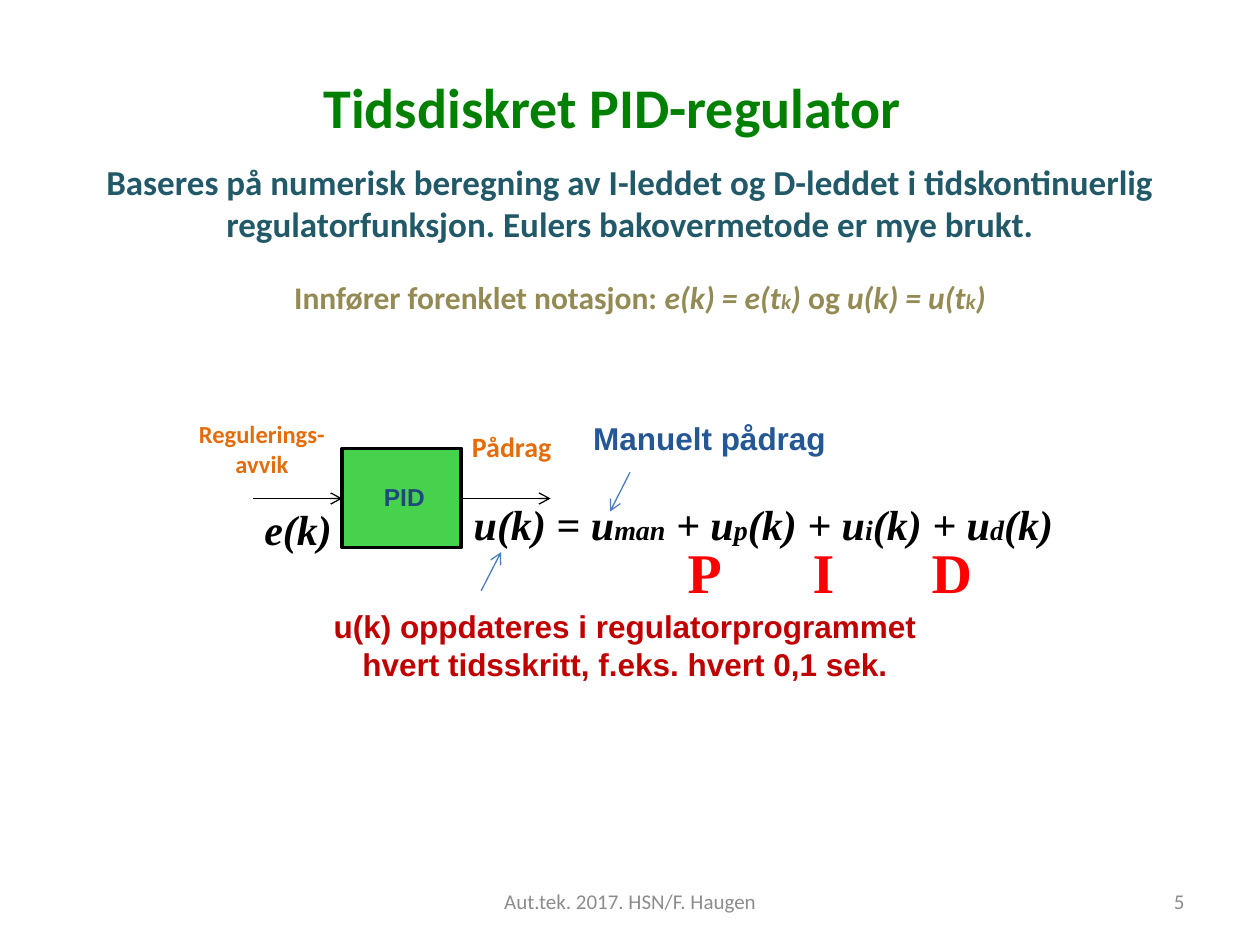
from lxml import etree
from pptx import Presentation
from pptx.dml.color import RGBColor
from pptx.enum import shapes, text
from pptx.oxml import ns
from pptx.util import Cm, Pt

GREEN = RGBColor(0x00, 0x80, 0x00)
TEAL = RGBColor(0x21, 0x59, 0x68)
OLIVE = RGBColor(0x94, 0x8A, 0x54)
ORANGE = RGBColor(0xE4, 0x6C, 0x0A)
NAVY = RGBColor(0x1F, 0x49, 0x7D)
BLUE = RGBColor(0x24, 0x57, 0x94)
ARROW_BLUE = RGBColor(0x4B, 0x7E, 0xBC)
RED = RGBColor(0xFF, 0x00, 0x00)
DARK_RED = RGBColor(0xC0, 0x00, 0x00)
BLOCK_GREEN = RGBColor(0x46, 0xD2, 0x4D)
BLACK = RGBColor(0x00, 0x00, 0x00)
GREY = RGBColor(0x8C, 0x8C, 0x8C)

LEFT, CENTER, RIGHT = text.PP_ALIGN.LEFT, text.PP_ALIGN.CENTER, text.PP_ALIGN.RIGHT
SANS, ARIAL, SERIF = "Calibri", "Arial", "Times New Roman"

# Content: a paragraph is a string or a list of (text, run font settings)
ITALIC, INDEX = {"italic": True}, {"italic": True, "size": Pt(12)}
SUB = {"size": Pt(16)}

TITLE = "Tidsdiskret PID-regulator"
NOTATION = [
    ("Innfører forenklet notasjon: ", {}),
    ("e(k) = e(t", ITALIC), ("k", INDEX), (") ", ITALIC), ("og", {}),
    (" u(k) = u(t", ITALIC), ("k", INDEX), (")", ITALIC),
]
CONTROL_LAW = [
    ("u(k) = u", {}), ("man", SUB), (" + u", {}), ("p", SUB), ("(k) + u", {}),
    ("i", SUB), ("(k) + u", {}), ("d", SUB), ("(k)", {}),
]
INTRO = ("Baseres på numerisk beregning av I-leddet og D-leddet i tidskontinuerlig "
         "regulatorfunksjon. Eulers bakovermetode er mye brukt.")
UPDATE = ["u(k) oppdateres i regulatorprogrammet",
          "hvert tidsskritt, f.eks. hvert 0,1 sek."]

# Paragraphs, box in cm, typeface, size, colour, alignment, wrap
LABELS = [
    ([INTRO], (0.9, 3.12, 23.6, 1.96), SANS, 20, TEAL, CENTER, True),
    ([NOTATION], (3.5, 5.49, 18.8, 1.02), SANS, 18, OLIVE, CENTER, True),
    (["Regulerings-", "avvik"], (3.5, 8.33, 3.56, 1.45), SANS, 14, ORANGE, CENTER, False),
    (["Pådrag"], (9.25, 8.53, 2.13, 0.94), SANS, 16, ORANGE, CENTER, False),
    (["PID"], (7.49, 9.6, 1.35, 0.86), ARIAL, 14, NAVY, LEFT, False),
    (["Manuelt pådrag"], (11.71, 8.33, 5.21, 1.12), ARIAL, 18, BLUE, LEFT, True),
    (UPDATE, (0.5, 12.12, 24.2, 1.88), ARIAL, 18, DARK_RED, CENTER, True),
]
FORMULAS = [
    (["e(k)"], (5.08, 10.03, 1.88, 1.27), False),
    ([CONTROL_LAW], (9.3, 9.93, 13.2, 1.3), True),
]
TERMS = {"P": 13.31, "I": 15.7, "D": 18.29}
FOOTERS = [
    ("Aut.tek. 2017. HSN/F. Haugen", 8.68, 8.05, CENTER),
    ("5", 18.21, 5.92, RIGHT),
]

# Block diagram geometry in cm
BLOCK = (6.9, 9.04, 2.4, 2.0)
SIGNAL_LENGTH = 1.8
block_left, block_right = BLOCK[0], BLOCK[0] + BLOCK[2]
signal_y = BLOCK[1] + BLOCK[3] / 2 + 0.01
ARROWS = [
    ((block_left - SIGNAL_LENGTH, signal_y), (block_left, signal_y), BLACK),
    ((block_right, signal_y), (block_right + SIGNAL_LENGTH, signal_y), BLACK),
    ((9.7, 11.91), (10.1, 11.13), ARROW_BLUE),
    ((12.7, 9.52), (12.3, 10.31), ARROW_BLUE),
]


def place(shape, box):
    shape.left, shape.top, shape.width, shape.height = map(Cm, box)


def write(frame, paragraphs, face, size, color, align=CENTER, bold=True, italic=False):
    for number, content in enumerate(paragraphs):
        paragraph = frame.paragraphs[0] if number == 0 else frame.add_paragraph()
        paragraph.alignment = align
        font = paragraph.font
        font.name, font.size, font.bold, font.italic = face, Pt(size), bold, italic
        font.color.rgb = color
        for words, settings in [(content, {})] if isinstance(content, str) else content:
            run = paragraph.add_run()
            run.text = words
            for setting, value in settings.items():
                setattr(run.font, setting, value)


def add_label(slide, paragraphs, box, *style, wrap=True, middle=False, **emphasis):
    frame = slide.shapes.add_textbox(*map(Cm, box)).text_frame
    frame.word_wrap = wrap
    if middle:
        frame.vertical_anchor = text.MSO_ANCHOR.MIDDLE
    write(frame, paragraphs, *style, **emphasis)


def add_arrow(slide, start, end, color):
    arrow = slide.shapes.add_connector(
        shapes.MSO_CONNECTOR.STRAIGHT, *map(Cm, start + end))
    arrow.line.color.rgb = color
    arrow.line.width = Pt(0.75)
    etree.SubElement(arrow.line._get_or_add_ln(), ns.qn("a:tailEnd"), type="arrow")
    etree.SubElement(arrow._element.spPr, ns.qn("a:effectLst"))


def main():
    deck = Presentation()
    deck.slide_width, deck.slide_height = Cm(25.4), Cm(19.05)
    slide = deck.slides.add_slide(deck.slide_layouts[5])

    # Title
    title = slide.shapes.title
    place(title, (4.37, 1.32, 15.95, 1.63))
    write(title.text_frame, [TITLE], SANS, 32, GREEN)

    # Controller block and arrows
    block = slide.shapes.add_shape(shapes.MSO_SHAPE.RECTANGLE, *map(Cm, BLOCK))
    block.shadow.inherit = False
    block.fill.solid()
    block.fill.fore_color.rgb = BLOCK_GREEN
    block.line.color.rgb = BLACK
    block.line.width = Pt(2)
    for arrow in ARROWS:
        add_arrow(slide, *arrow)

    # Explanations, formulas and the names of the terms
    for paragraphs, box, face, size, color, align, wrap in LABELS:
        add_label(slide, paragraphs, box, face, size, color, align, wrap=wrap)
    for paragraphs, box, wrap in FORMULAS:
        add_label(slide, paragraphs, box, SERIF, 24, BLACK, LEFT, wrap=wrap, italic=True)
    for term, left in TERMS.items():
        add_label(slide, [term], (left, 10.72, 1.8, 1.6), SERIF, 32, RED, middle=True)

    # Footer and slide number
    for words, left, width, align in FOOTERS:
        add_label(slide, [words], (left, 17.65, width, 1.02), SANS, 12, GREY, align,
                  middle=True, bold=False)

    deck.save("out.pptx")


if __name__ == "__main__":
    main()
